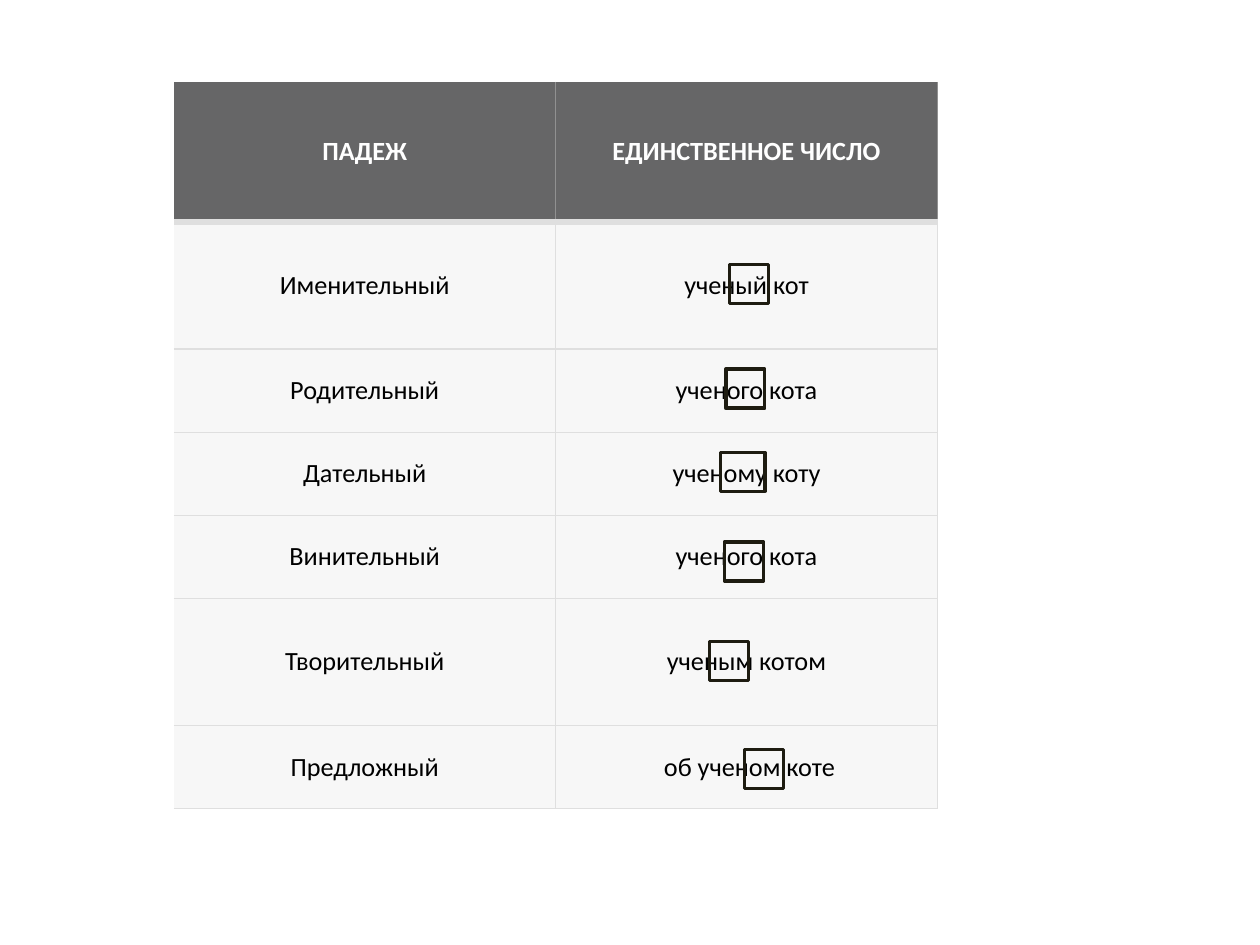
from lxml.etree import SubElement
from pptx import Presentation
from pptx.dml.color import RGBColor
from pptx.enum.shapes import MSO_SHAPE
from pptx.enum.text import MSO_ANCHOR, PP_ALIGN
from pptx.oxml.ns import qn
from pptx.util import Inches, Pt


def color(hex_string):
    return RGBColor.from_string(hex_string)


def add_border(cell, side, hex_string, width):
    """Draw one cell border; side is L, R, T or B. Call before setting the fill."""
    line = SubElement(cell._tc.get_or_add_tcPr(), qn(f"a:ln{side}"), w=str(Pt(width)))
    if width:
        fill = SubElement(line, qn("a:solidFill"))
        SubElement(fill, qn("a:srgbClr"), val=hex_string)
    else:
        SubElement(line, qn("a:noFill"))


TABLE_LEFT, TABLE_TOP, COLUMN_WIDTH = 1.38, 0.65, 3.03
HEADER_HEIGHT, TALL_ROW, SHORT_ROW = 1.11, 1.01, 0.66
BOX_SIZE = 0.31
GRID, HEADER_GRID = "DFDFDF", "919191"

header = ("ПАДЕЖ", "ЕДИНСТВЕННОЕ ЧИСЛО")
# case, phrase, row height, then left, top and width of the box round the ending
cases = [
    ("Именительный", "ученый кот", TALL_ROW, 5.79, 2.1, BOX_SIZE),
    ("Родительный", "ученого кота", SHORT_ROW, 5.76, 2.93, BOX_SIZE),
    ("Дательный", "ученому коту", SHORT_ROW, 5.72, 3.59, 0.35),
    ("Винительный", "ученого кота", SHORT_ROW, 5.75, 4.3, BOX_SIZE),
    ("Творительный", "ученым котом", TALL_ROW, 5.63, 5.09, BOX_SIZE),
    ("Предложный", " об ученом коте", SHORT_ROW, 5.91, 5.95, BOX_SIZE),
]
rows = [header] + [case[:2] for case in cases]
heights = [HEADER_HEIGHT] + [case[2] for case in cases]

presentation = Presentation()
presentation.slide_width, presentation.slide_height = Inches(10), Inches(7.5)
slide = presentation.slides.add_slide(presentation.slide_layouts[6])

table = slide.shapes.add_table(
    len(rows), len(header), Inches(TABLE_LEFT), Inches(TABLE_TOP),
    Inches(COLUMN_WIDTH * len(header)), Inches(sum(heights))).table
table.horz_banding = False
for column in table.columns:
    column.width = Inches(COLUMN_WIDTH)

for row_index, (texts, height) in enumerate(zip(rows, heights)):
    table.rows[row_index].height = Inches(height)
    is_header = row_index == 0
    side_color = HEADER_GRID if is_header else GRID
    top_width = {0: 0, 1: 3.75}.get(row_index, 0.75)
    for column_index, text in enumerate(texts):
        cell = table.cell(row_index, column_index)
        add_border(cell, "L", side_color, 0.75 if column_index else 0)
        add_border(cell, "R", side_color, 0.75)
        add_border(cell, "T", GRID, top_width)
        add_border(cell, "B", GRID, 3.75 if is_header else 0.75)
        cell.fill.solid()
        cell.fill.fore_color.rgb = color("666667" if is_header else "F7F7F7")
        cell.vertical_anchor = MSO_ANCHOR.MIDDLE
        cell.margin_left = cell.margin_right = Inches(0.13)
        cell.margin_top = cell.margin_bottom = Inches(0.14 if is_header else 0.11)

        paragraph = cell.text_frame.paragraphs[0]
        paragraph.text = text
        paragraph.alignment = PP_ALIGN.CENTER
        font = paragraph.runs[0].font
        font.name, font.size, font.bold = "Calibri", Pt(15), is_header
        font.color.rgb = color("FFFFFF" if is_header else "000000")

for *_, left, top, width in cases:
    ending_box = slide.shapes.add_shape(
        MSO_SHAPE.RECTANGLE, Inches(left), Inches(top), Inches(width), Inches(BOX_SIZE))
    ending_box.shadow.inherit = False
    ending_box.fill.background()
    ending_box.line.color.rgb = color("1E1C11")
    ending_box.line.width = Pt(2)

presentation.save("out.pptx")
